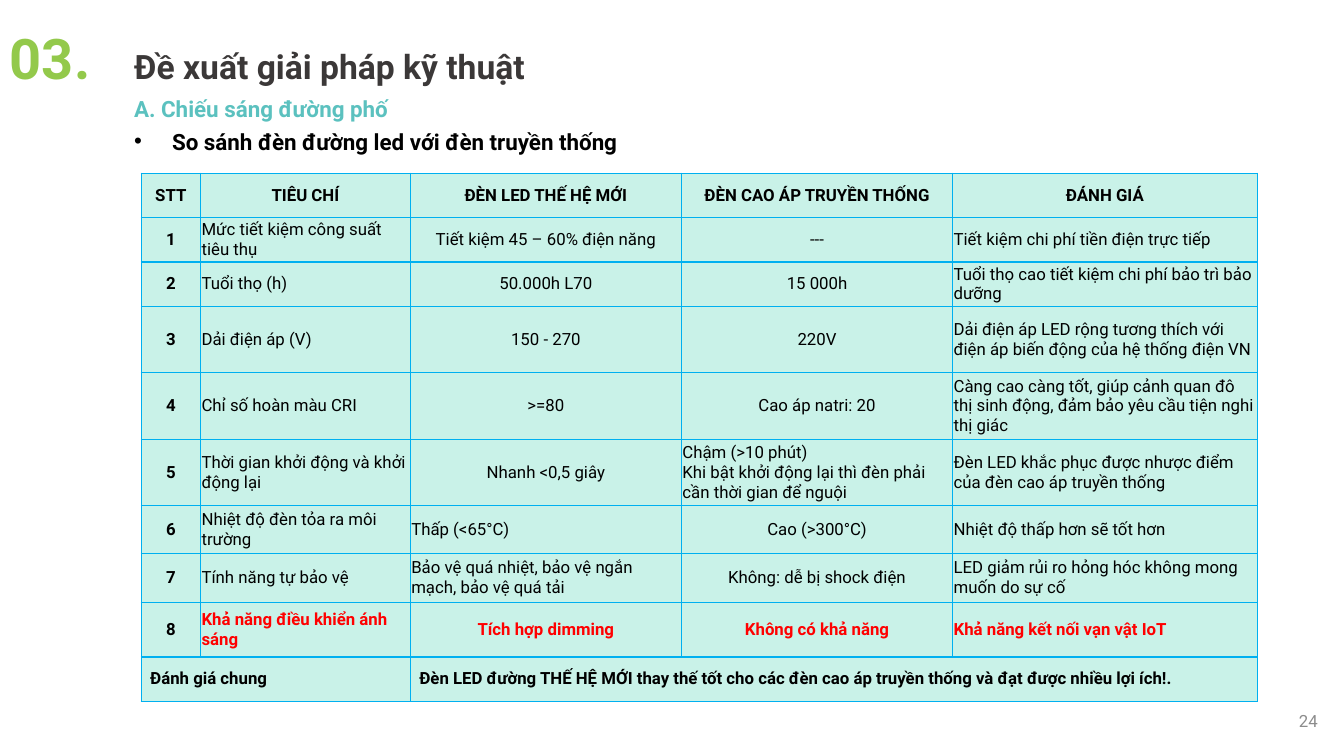
from dataclasses import dataclass
from lxml import etree
from pptx import Presentation
from pptx.dml.color import RGBColor
from pptx.enum.text import MSO_ANCHOR, MSO_AUTO_SIZE, PP_ALIGN
from pptx.oxml.ns import qn
from pptx.util import Inches, Pt

TOP, MIDDLE = MSO_ANCHOR.TOP, MSO_ANCHOR.MIDDLE
FIXED = MSO_AUTO_SIZE.NONE
LEFT, CENTER, RIGHT = PP_ALIGN.LEFT, PP_ALIGN.CENTER, PP_ALIGN.RIGHT
WIDE, HIGH = Inches(13.33), Inches(7.5)


@dataclass(frozen=True)
class Theme:
    font: str = "Roboto"
    green: str = "93C94B"
    dark: str = "3B3838"
    teal: str = "5BC1BF"
    grey: str = "8C8C8C"
    black: str = "000000"
    red: str = "FF0000"
    mint: str = "29CFA7"
    blue: str = "00B0F0"
    huge: int = 40
    title: int = 24
    head: int = 16
    small: int = 12


T = Theme()

COLS = [0.59, 2.08, 2.69, 2.69, 3.02]
ROWS = [0.44, 0.44, 0.44, 0.66, 0.66, 0.66, 0.47, 0.49, 0.54, 0.44]
HEADS = ["STT", "TIÊU CHÍ", "ĐÈN LED THẾ HỆ MỚI", "ĐÈN CAO ÁP TRUYỀN THỐNG", "ĐÁNH GIÁ"]
ITEMS = [
    ["Mức tiết kiệm công suất tiêu thụ", "Tiết kiệm 45 – 60% điện năng", "---",
     "Tiết kiệm chi phí tiền điện trực tiếp"],
    ["Tuổi thọ (h)", "50.000h L70", "15 000h",
     "Tuổi thọ cao tiết kiệm chi phí bảo trì bảo dưỡng"],
    ["Dải điện áp (V)", "150 - 270", "220V",
     "Dải điện áp LED rộng tương thích với điện áp biến động của hệ thống điện VN"],
    ["Chỉ số hoàn màu CRI", ">=80", "Cao áp natri: 20",
     "Càng cao càng tốt, giúp cảnh quan đô thị sinh động, đảm bảo yêu cầu tiện nghi thị giác"],
    ["Thời gian khởi động và khởi động lại", "Nhanh <0,5 giây",
     "Chậm (>10 phút)\vKhi bật khởi động lại thì đèn phải cần thời gian để nguội",
     "Đèn LED khắc phục được nhược điểm của đèn cao áp truyền thống"],
    ["Nhiệt độ đèn tỏa ra môi trường", "Thấp (<65°C)", "Cao (>300°C)",
     "Nhiệt độ thấp hơn sẽ tốt hơn"],
    ["Tính năng tự bảo vệ", "Bảo vệ quá nhiệt, bảo vệ ngắn mạch, bảo vệ quá tải",
     "Không: dễ bị shock điện", "LED giảm rủi ro hỏng hóc không mong muốn do sự cố"],
    ["Khả năng điều khiển ánh sáng", "Tích hợp dimming", "Không có khả năng",
     "Khả năng kết nối vạn vật IoT"],
]
TOTAL = ["Đánh giá chung", "Đèn LED đường THẾ HỆ MỚI thay thế tốt cho các đèn cao áp "
         "truyền thống và đạt được nhiều lợi ích!."]
FLUSH = {(5, 3), (6, 2), (7, 2)}


def area(x, y, w, h):
    return [int(WIDE * x / 100), int(HIGH * y / 100), int(WIDE * w / 100), int(HIGH * h / 100)]


def style(para, size, color, bold=True, align=LEFT):
    para.alignment = align
    font = para.font
    font.name, font.size, font.bold = T.font, Pt(size), bold
    font.color.rgb = RGBColor.from_string(color)


def fill_text(shape, box, text, size, color, bold=True, align=LEFT, anchor=TOP):
    shape.left, shape.top, shape.width, shape.height = box
    frame = shape.text_frame
    frame.word_wrap, frame.auto_size = True, FIXED
    frame.vertical_anchor = anchor
    frame.text = text
    para = frame.paragraphs[0]
    para.space_before = Pt(0)
    style(para, size, color, bold, align)
    return para


def label(slide, box, *args, **opts):
    return fill_text(slide.shapes.add_textbox(*box), box, *args, **opts)


def header(slide, box):
    left, top, width, height = box
    text_x = left + int(width * 0.12)
    text_w = left + width - text_x
    label(slide, [left, top, int(width * 0.11), int(height * 0.55)], "03.", T.huge, T.green)
    fill_text(slide.shapes.title, [text_x, top + int(height * 0.16), text_w, int(height * 0.36)],
              "Đề xuất giải pháp kỹ thuật", T.title, T.dark)
    label(slide, [text_x, top + int(height * 0.51), text_w, int(height * 0.26)],
          "A. Chiếu sáng đường phố", T.head, T.teal)
    body = slide.placeholders[1]
    box = [text_x, top + int(height * 0.74), text_w, int(height * 0.26)]
    body.left, body.top, body.width, body.height = box
    props = body.text_frame.paragraphs[0]._p.get_or_add_pPr()
    props.set("marL", str(Inches(0.31)))
    props.set("indent", str(-Inches(0.31)))
    etree.SubElement(props, qn("a:buFont")).set("typeface", "Wingdings")
    etree.SubElement(props, qn("a:buChar")).set("char", "❑")
    fill_text(body, box, "So sánh đèn đường led với đèn truyền thống", T.head, T.black)


def paint(cell):
    cell.fill.solid()
    cell.fill.fore_color.rgb = RGBColor.from_string(T.mint)
    props = cell._tc.get_or_add_tcPr()
    tone = props.find(qn("a:solidFill"))[0]
    etree.SubElement(tone, qn("a:alpha")).set("val", "25000")
    for spot, side in enumerate(("lnL", "lnR", "lnT", "lnB")):
        line = etree.Element(qn("a:" + side), w=str(Pt(1)))
        ink = etree.SubElement(line, qn("a:solidFill"))
        etree.SubElement(ink, qn("a:srgbClr")).set("val", T.blue)
        props.insert(spot, line)


def write(cell, text, color, bold, align, pad):
    cell.text = text
    cell.vertical_anchor = MIDDLE
    cell.margin_left = cell.margin_right = Inches(pad[0])
    cell.margin_top = cell.margin_bottom = Inches(pad[1])
    style(cell.text_frame.paragraphs[0], T.small, color, bold, align)


def matrix(slide, box):
    table = slide.shapes.add_table(len(ROWS), len(COLS), *box).table
    table.first_row = table.horz_banding = False
    for col, share in zip(table.columns, COLS):
        col.width = int(box[2] * share / sum(COLS))
    for row, share in zip(table.rows, ROWS):
        row.height = int(box[3] * share / sum(ROWS))
    for cell in table.iter_cells():
        paint(cell)
    lines = [HEADS] + [[str(num)] + item for num, item in enumerate(ITEMS, 1)]
    for r, line in enumerate(lines):
        last = r == len(ITEMS)
        for c, text in enumerate(line):
            flush = r > 0 and (c in (1, 4) or (r, c) in FLUSH)
            color = T.red if last and c else T.black
            write(table.cell(r, c), text, color, r == 0 or c == 0 or last,
                  LEFT if flush else CENTER, (0.01, 0))
    foot = len(lines)
    for text, start, end in zip(TOTAL, (0, 2), (1, 4)):
        table.cell(foot, start).merge(table.cell(foot, end))
        write(table.cell(foot, start), text, T.black, True, LEFT, (0.09, 0.04))


def build():
    deck = Presentation()
    deck.slide_width, deck.slide_height = WIDE, HIGH
    slide = deck.slides.add_slide(deck.slide_layouts[1])
    header(slide, area(0, 2.4, 77, 18.67))
    matrix(slide, area(10.5, 22.93, 83.05, 69.87))
    label(slide, area(76.29, 92.67, 22.5, 5.33), "24", T.small, T.grey,
          bold=False, align=RIGHT, anchor=MIDDLE)
    deck.save("out.pptx")


if __name__ == "__main__":
    build()
